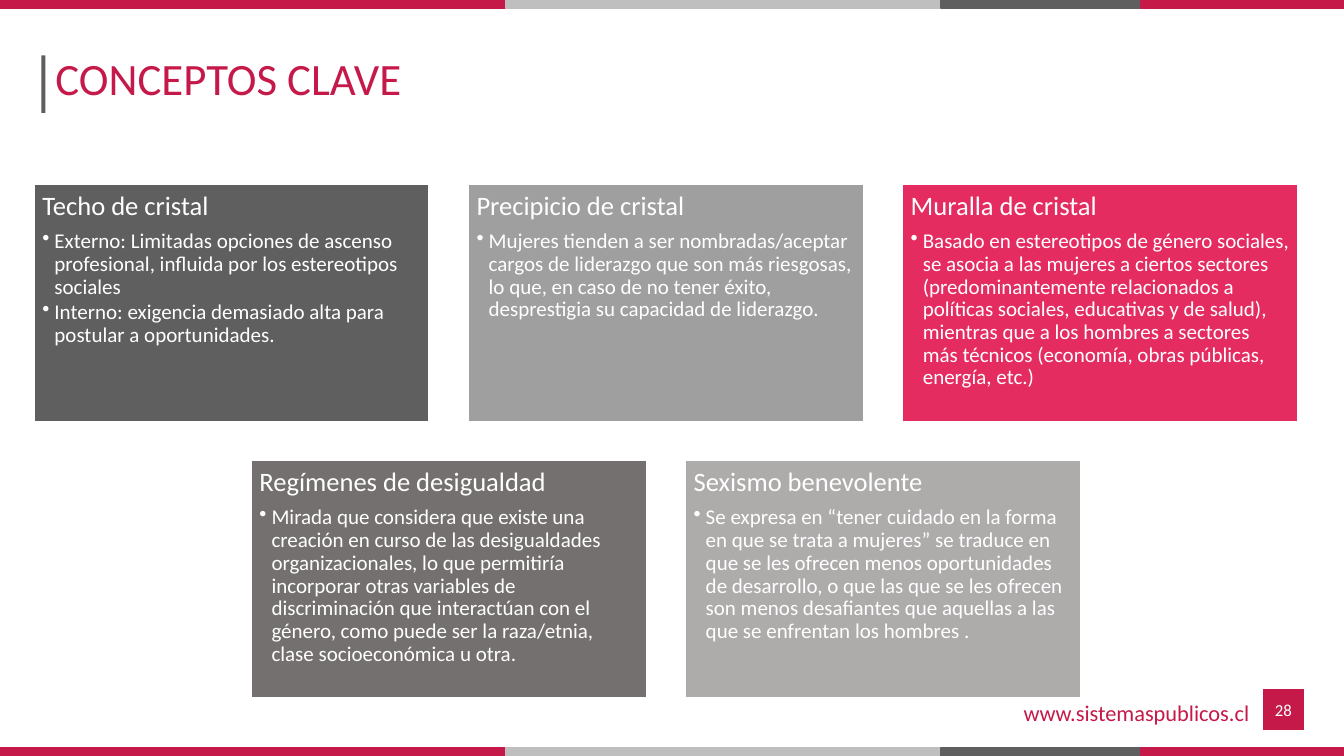
from lxml import etree
from pptx import Presentation
from pptx import util as u
from pptx.dml.color import RGBColor
from pptx.enum import shapes, text
from pptx.oxml.ns import qn

WIDTH, HEIGHT = 13.33, 7.5
FONT = "Calibri"
COLORS = {
    "red": "C41949", "silver": "BFBFBF", "dark": "5F5F5F", "white": "FFFFFF",
    "gray": "9F9F9F", "pink": "E42C61", "taupe": "757070", "stone": "AEABAB",
}
COLUMNS, GAP = 3, 0.39
CARDS = [
    ("Techo de cristal", "dark", [
        "Externo: Limitadas opciones de ascenso profesional, influida por los "
        "estereotipos sociales",
        "Interno: exigencia demasiado alta para postular a oportunidades."]),
    ("Precipicio de cristal", "gray", [
        "Mujeres tienden a ser nombradas/aceptar cargos de liderazgo que son más "
        "riesgosas, lo que, en caso de no tener éxito, desprestigia su capacidad "
        "de liderazgo."]),
    ("Muralla de cristal", "pink", [
        "Basado en estereotipos de género sociales, se asocia a las mujeres a "
        "ciertos sectores (predominantemente relacionados a políticas sociales, "
        "educativas y de salud), mientras que a los hombres a sectores más "
        "técnicos (economía, obras públicas, energía, etc.)"]),
    ("Regímenes de desigualdad", "taupe", [
        "Mirada que considera que existe una creación en curso de las "
        "desigualdades organizacionales, lo que permitiría incorporar otras "
        "variables de discriminación que interactúan con el género, como puede "
        "ser la raza/etnia, clase socioeconómica u otra."]),
    ("Sexismo benevolente", "stone", [
        "Se expresa en “tener cuidado en la forma en que se trata a mujeres” se "
        "traduce en que se les ofrecen menos oportunidades de desarrollo, o que "
        "las que se les ofrecen son menos desafiantes que aquellas a las que se "
        "enfrentan los hombres ."]),
]


def color(name):
    return RGBColor.from_string(COLORS[name])


def inches(box):
    return [u.Inches(length) for length in box]


def add_rectangle(slide, box, fill, line=None):
    shape = slide.shapes.add_shape(shapes.MSO_SHAPE.RECTANGLE, *inches(box))
    shape.shadow.inherit = False
    shape.fill.solid()
    shape.fill.fore_color.rgb = color(fill)
    if line:
        shape.line.color.rgb = color(line)
        shape.line.width = u.Pt(1)
    else:
        shape.line.fill.background()
    return shape


def write(paragraph, words, size, ink, align=text.PP_ALIGN.LEFT):
    paragraph.alignment = align
    run = paragraph.add_run()
    run.text = words
    run.font.name, run.font.size = FONT, u.Pt(size)
    run.font.color.rgb = color(ink)


def add_bullet(paragraph, indent):
    properties = paragraph._p.get_or_add_pPr()
    properties.set("marL", str(u.Inches(indent)))
    properties.set("indent", str(-u.Inches(indent)))
    etree.SubElement(properties, qn("a:buChar")).set("char", "•")


def add_band(slide, box):
    """Draw a red edge strip with its silver and dark segments."""
    left, top, width, height = box
    for start, end, name in [(0, 1, "red"), (0.376, 0.848, "silver"),
                             (0.7, 0.848, "dark")]:
        segment = (left + start * width, top, (end - start) * width, height)
        add_rectangle(slide, segment, name, name)


def add_title(slide, box):
    left, top, width, height = box
    add_rectangle(slide, (left - 0.04, top + 0.13, 0.04, 0.57), "dark")
    title = slide.shapes.title
    title.left, title.top, title.width, title.height = inches(box)
    frame = title.text_frame
    frame.auto_size = text.MSO_AUTO_SIZE.NONE
    frame.vertical_anchor = text.MSO_ANCHOR.MIDDLE
    frame.paragraphs[0].line_spacing = 1.5
    write(frame.paragraphs[0], "CONCEPTOS CLAVE", 32, "red")


def add_card(slide, box, heading, fill, points):
    frame = add_rectangle(slide, box, fill, "white").text_frame
    frame.word_wrap = True
    frame.vertical_anchor = text.MSO_ANCHOR.TOP
    frame.margin_left = frame.margin_right = u.Inches(0.08)
    frame.margin_top = frame.margin_bottom = u.Inches(0.08)
    paragraph = frame.paragraphs[0]
    paragraph.line_spacing, paragraph.space_after = 0.9, u.Pt(6.65)
    write(paragraph, heading, 19, "white")
    for point in points:
        paragraph = frame.add_paragraph()
        paragraph.level = 1
        add_bullet(paragraph, 0.12)
        paragraph.line_spacing, paragraph.space_after = 0.9, u.Pt(2.25)
        write(paragraph, point, 15, "white")


def add_cards(slide, box):
    """Fill rows of equal cards, centring a row that is not full."""
    left, top, width, height = box
    rows = [CARDS[i:i + COLUMNS] for i in range(0, len(CARDS), COLUMNS)]
    card_width = (width - (COLUMNS - 1) * GAP) / COLUMNS
    card_height = (height - (len(rows) - 1) * GAP) / len(rows)
    for row, cards in enumerate(rows):
        indent = (COLUMNS - len(cards)) * (card_width + GAP) / 2
        for column, card in enumerate(cards):
            place = (left + indent + column * (card_width + GAP),
                     top + row * (card_height + GAP), card_width, card_height)
            add_card(slide, place, *card)


def add_footer(slide, box):
    """Place the web address and, at the right end, the page number."""
    left, top, width, side = box
    address = slide.shapes.add_textbox(
        *inches((left, top + 0.05, width - side - 0.04, 0.34))).text_frame
    address.word_wrap = True
    write(address.paragraphs[0], "www.sistemaspublicos.cl", 16, "red",
          text.PP_ALIGN.RIGHT)
    square = (left + width - side, top, side, side)
    number = add_rectangle(slide, square, "red", "red").text_frame
    number.margin_left = number.margin_right = 0
    number.vertical_anchor = text.MSO_ANCHOR.MIDDLE
    write(number.paragraphs[0], "28", 12, "white", text.PP_ALIGN.CENTER)


def main():
    presentation = Presentation()
    presentation.slide_width = u.Inches(WIDTH)
    presentation.slide_height = u.Inches(HEIGHT)
    slide = presentation.slides.add_slide(presentation.slide_layouts[5])
    for top in (0, HEIGHT - 0.08):
        add_band(slide, (0, top, WIDTH, 0.08))
    add_title(slide, (0.45, 0.42, 10.71, 0.43))
    add_cards(slide, (0.34, 1.83, 12.53, 5.09))
    add_footer(slide, (9.71, 6.84, 3.22, 0.4))
    presentation.save("out.pptx")


if __name__ == "__main__":
    main()
